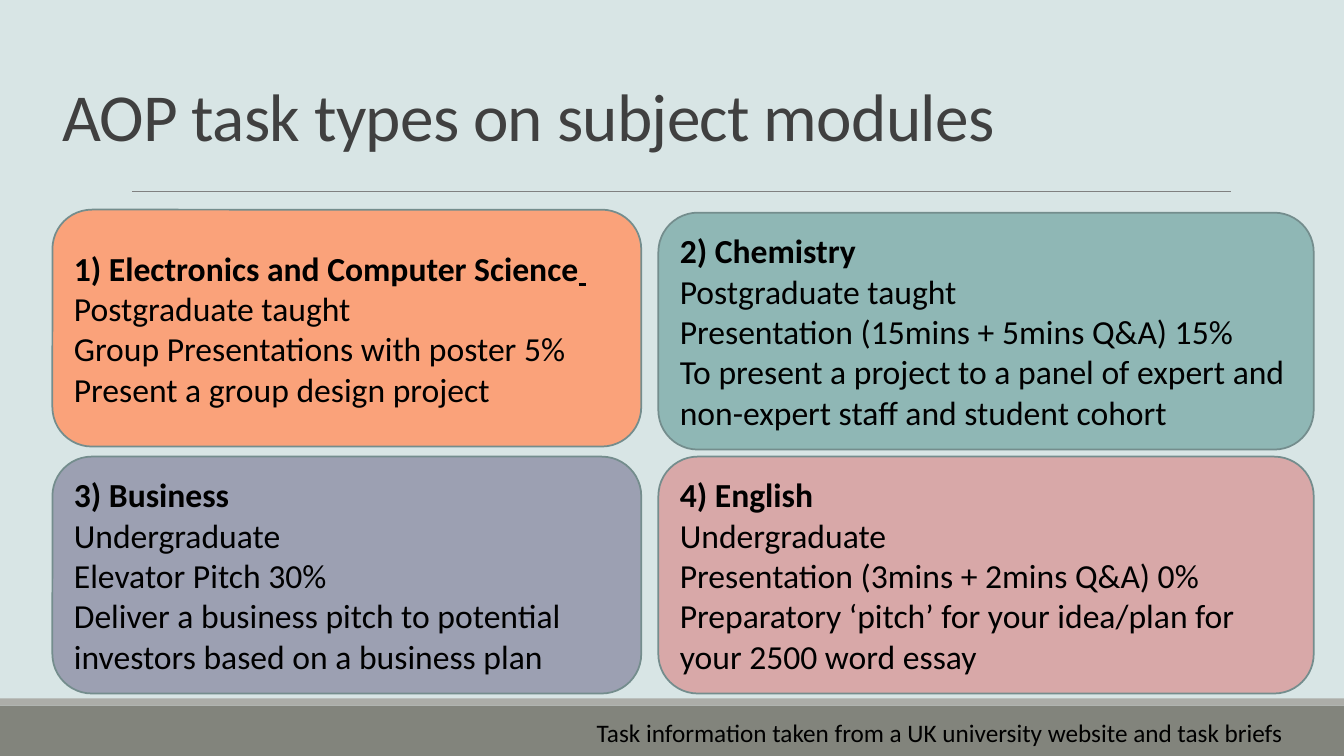
from dataclasses import dataclass

from lxml import etree
from pptx import Presentation
from pptx.dml.color import RGBColor
from pptx.enum.shapes import MSO_CONNECTOR, MSO_SHAPE
from pptx.enum.text import MSO_ANCHOR, PP_ALIGN
from pptx.oxml.ns import qn
from pptx.util import Inches, Pt

RECT = MSO_SHAPE.RECTANGLE
ROUNDED = MSO_SHAPE.ROUNDED_RECTANGLE
STRAIGHT = MSO_CONNECTOR.STRAIGHT
TOP, MIDDLE, BOTTOM = MSO_ANCHOR.TOP, MSO_ANCHOR.MIDDLE, MSO_ANCHOR.BOTTOM
LEFT = PP_ALIGN.LEFT


@dataclass(frozen=True)
class Theme:
    font: str = "Calibri"
    background: str = "D8E5E5"
    band: str = "82847C"
    band_edge: str = "ACADA8"
    rule: str = "808080"
    title: str = "404040"
    text: str = "000000"
    card_line: str = "748D8D"
    orange: str = "FAA27A"
    teal: str = "8FB7B5"
    violet: str = "9CA0B2"
    pink: str = "D8A8A8"
    title_size: int = 48
    card_size: int = 24
    source_size: int = 18


THEME = Theme()
CARD_HEIGHT = 2.35
LEFT_COLUMN = (0.52, 5.84)
RIGHT_COLUMN = (6.53, 6.5)

# column, top, fill, heading, body lines
CARDS = [
    (LEFT_COLUMN, 2.08, THEME.orange, "1) Electronics and Computer Science",
     ["Postgraduate taught", "Group Presentations with poster 5%",
      "Present a group design project"]),
    (RIGHT_COLUMN, 2.11, THEME.teal, "2) Chemistry",
     ["Postgraduate taught", "Presentation (15mins + 5mins Q&A) 15%",
      "To present a project to a panel of expert and non-expert staff and student cohort"]),
    (LEFT_COLUMN, 4.53, THEME.violet, "3) Business",
     ["Undergraduate", "Elevator Pitch 30%",
      "Deliver a business pitch to potential investors based on a business plan"]),
    (RIGHT_COLUMN, 4.53, THEME.pink, "4) English",
     ["Undergraduate", "Presentation (3mins + 2mins Q&A) 0%",
      "Preparatory ‘pitch’ for your idea/plan for your 2500 word essay"]),
]


def rgb(value):
    return RGBColor.from_string(value)


def add_run(p, text, size, color=THEME.text, bold=False, underline=False, spacing=None):
    """Append a run; spacing is the letter spacing in points."""
    r = p.add_run()
    r.text = text
    r.font.name = THEME.font
    r.font.size = Pt(size)
    r.font.color.rgb = rgb(color)
    r.font.bold = bold
    r.font.underline = underline
    if spacing is not None:
        r.font._element.set("spc", str(round(spacing * 100)))
    return r


def add_box(slide, shape, x, y, w, h, fill, line=None):
    sp = slide.shapes.add_shape(shape, Inches(x), Inches(y), Inches(w), Inches(h))
    sp.shadow.inherit = False
    sp.fill.solid()
    sp.fill.fore_color.rgb = rgb(fill)
    if line:
        sp.line.color.rgb = rgb(line)
        sp.line.width = Pt(1.25)
    else:
        sp.line.fill.background()
    return sp


def add_rule(slide, x1, x2, y):
    line = slide.shapes.add_connector(STRAIGHT, Inches(x1), Inches(y), Inches(x2), Inches(y))
    line.line.color.rgb = rgb(THEME.rule)
    line.line.width = Pt(0.5)
    etree.SubElement(line._element.spPr, qn("a:effectLst"))


def add_text(slide, text, x, y, w, h, anchor=TOP, line_spacing=None, **run_format):
    tf = slide.shapes.add_textbox(Inches(x), Inches(y), Inches(w), Inches(h)).text_frame
    tf.word_wrap = True
    tf.vertical_anchor = anchor
    p = tf.paragraphs[0]
    p.line_spacing = line_spacing
    add_run(p, text, **run_format)


def add_card(slide, column, top, fill, heading, lines):
    """Draw a rounded card with a bold heading and return its heading paragraph."""
    x, w = column
    sp = add_box(slide, ROUNDED, x, top, w, CARD_HEIGHT, fill, THEME.card_line)
    tf = sp.text_frame
    tf.word_wrap = True
    tf.vertical_anchor = MIDDLE
    title = tf.paragraphs[0]
    title.alignment = LEFT
    add_run(title, heading, THEME.card_size, bold=True)
    for text in lines:
        p = tf.add_paragraph()
        p.alignment = LEFT
        add_run(p, text, THEME.card_size)
    return title


def main():
    prs = Presentation()
    prs.slide_width, prs.slide_height = Inches(13.33), Inches(7.5)
    slide = prs.slides.add_slide(prs.slide_layouts[6])
    slide.background.fill.solid()
    slide.background.fill.fore_color.rgb = rgb(THEME.background)

    add_box(slide, RECT, 0, 7, 13.33, 0.5, THEME.band)
    add_box(slide, RECT, 0, 6.93, 13.33, 0.07, THEME.band_edge)
    add_rule(slide, 1.31, 12.21, 1.9)
    add_text(slide, "AOP task types on subject modules", 0.52, 0, 11, 1.59,
             anchor=BOTTOM, line_spacing=0.85, size=THEME.title_size,
             color=THEME.title, spacing=-0.5)
    add_text(slide, "Task information taken from a UK university website and task briefs",
             5.82, 7.07, 7.57, 0.4, size=THEME.source_size)

    headings = [add_card(slide, *card) for card in CARDS]
    add_run(headings[0], " ", THEME.card_size, underline=True)

    prs.save("out.pptx")


if __name__ == "__main__":
    main()
